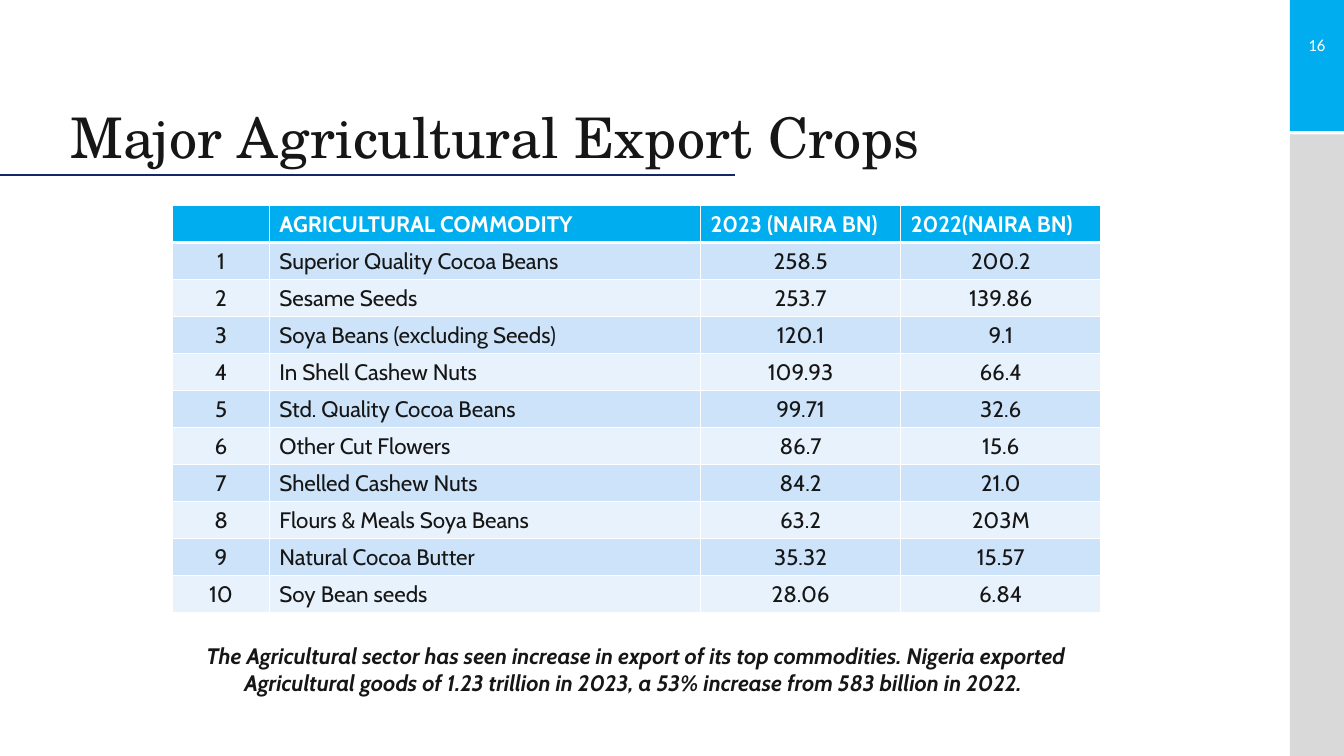
from lxml import etree
from pptx import Presentation
from pptx import util as u
from pptx.dml import color
from pptx.enum import shapes, text
from pptx.oxml import ns

COLORS = {"blue": "00AEEF", "grey": "D9D9D9", "navy": "122867", "ink": "171616",
          "white": "FFFFFF", "band": "CCE3F9", "pale": "E7F2FC"}
LEFT, CENTER = text.PP_ALIGN.LEFT, text.PP_ALIGN.CENTER


def add_text(frame, words, size, font, ink, align, bold=False, italic=False):
    para = frame.paragraphs[0]
    para.alignment = align
    span = para.add_run()
    span.text = words
    span.font.size = u.Pt(size)
    span.font.name = font
    span.font.bold = bold
    span.font.italic = italic
    span.font.color.rgb = color.RGBColor.from_string(COLORS[ink])
    return para


def add_border(cell, side, width):
    line = etree.SubElement(cell._tc.get_or_add_tcPr(), ns.qn(f"a:{side}"), w=str(u.Pt(width)))
    fill = etree.SubElement(line, ns.qn("a:solidFill"))
    etree.SubElement(fill, ns.qn("a:srgbClr"), val=COLORS["white"])


deck = Presentation()
deck.slide_width, deck.slide_height = u.Pt(960), u.Pt(540)
page = deck.slides.add_slide(deck.slide_layouts[5])

# Side bar
for top, height, tone in [(0, 93.6, "blue"), (96, 444, "grey")]:
    bar = page.shapes.add_shape(shapes.MSO_SHAPE.RECTANGLE,
                                u.Pt(921.4), u.Pt(top), u.Pt(38.6), u.Pt(height))
    bar.shadow.inherit = False
    bar.fill.solid()
    bar.fill.fore_color.rgb = color.RGBColor.from_string(COLORS[tone])
    bar.line.fill.background()

# Page number
number = page.shapes.add_textbox(u.Pt(917.3), u.Pt(21), u.Pt(46.8), u.Pt(21.8))
number.text_frame.word_wrap = True
number.text_frame.vertical_anchor = text.MSO_ANCHOR.MIDDLE
add_text(number.text_frame, "16", 12, "Calibri", "white", CENTER)

# Title and its rule
title = page.shapes.title
title.left, title.top, title.width, title.height = u.Pt(43.2), u.Pt(66.2), u.Pt(765.4), u.Pt(59)
title.text_frame.auto_size = text.MSO_AUTO_SIZE.NONE
title.text_frame.word_wrap = True
title.text_frame.vertical_anchor = text.MSO_ANCHOR.BOTTOM
heading = add_text(title.text_frame, "Major Agricultural Export Crops",
                   40, "TeX Gyre Schola", "ink", LEFT)
heading.line_spacing = 0.9

rule = page.shapes.add_connector(shapes.MSO_CONNECTOR.STRAIGHT,
                                 u.Pt(0), u.Pt(125.1), u.Pt(525.3), u.Pt(125.1))
rule.line.color.rgb = color.RGBColor.from_string(COLORS["navy"])
rule.line.width = u.Pt(1.5)
etree.SubElement(rule._element.spPr, ns.qn("a:effectLst"))

# Export table
header = ("", "AGRICULTURAL COMMODITY", "2023 (NAIRA BN)", "2022(NAIRA BN)")
crops = [
    ("Superior Quality Cocoa Beans", "258.5", "200.2"),
    ("Sesame Seeds", "253.7", "139.86"),
    ("Soya Beans (excluding Seeds)", "120.1", "9.1"),
    ("In Shell Cashew Nuts", "109.93", "66.4"),
    ("Std. Quality Cocoa Beans", "99.71", "32.6"),
    ("Other Cut Flowers", "86.7", "15.6"),
    ("Shelled Cashew Nuts", "84.2", "21.0"),
    ("Flours & Meals Soya Beans", "63.2", "203M"),
    ("Natural Cocoa Butter", "35.32", "15.57"),
    ("Soy Bean seeds", "28.06", "6.84"),
]
rows = [header] + [(str(rank), *crop) for rank, crop in enumerate(crops, 1)]
widths = [69, 308, 143, 143]
row_height = 26.4
table = page.shapes.add_table(len(rows), len(widths), u.Pt(123.4), u.Pt(146.9),
                              u.Pt(sum(widths)), u.Pt(row_height * len(rows))).table
for column, width in zip(table.columns, widths):
    column.width = u.Pt(width)

for r, row in enumerate(rows):
    table.rows[r].height = u.Pt(row_height)
    is_header = r == 0
    tone = "blue" if is_header else ("pale", "band")[r % 2]
    for c, words in enumerate(row):
        cell = table.cell(r, c)
        for side in ("lnL", "lnR", "lnT", "lnB"):
            thick = (is_header and side == "lnB") or (r == 1 and side == "lnT")
            add_border(cell, side, 3 if thick else 1)
        cell.fill.solid()
        cell.fill.fore_color.rgb = color.RGBColor.from_string(COLORS[tone])
        if words:
            add_text(cell.text_frame, words, 16, "Cabin", "white" if is_header else "ink",
                     LEFT if is_header or c == 1 else CENTER, bold=is_header)
        else:
            # Keeps the empty cell from stretching its row
            etree.SubElement(cell.text_frame.paragraphs[0]._p, ns.qn("a:endParaRPr"), sz="1600")

# Closing remark
remark = page.shapes.add_textbox(u.Pt(103), u.Pt(455), u.Pt(702.7), u.Pt(46.1))
remark.text_frame.word_wrap = True
add_text(remark.text_frame,
         "The Agricultural sector has seen increase in export of its top commodities. "
         "Nigeria exported Agricultural goods of 1.23 trillion in 2023, "
         "a 53% increase from 583 billion in 2022. ",
         16, "Cabin", "ink", CENTER, bold=True, italic=True)

deck.save("out.pptx")
